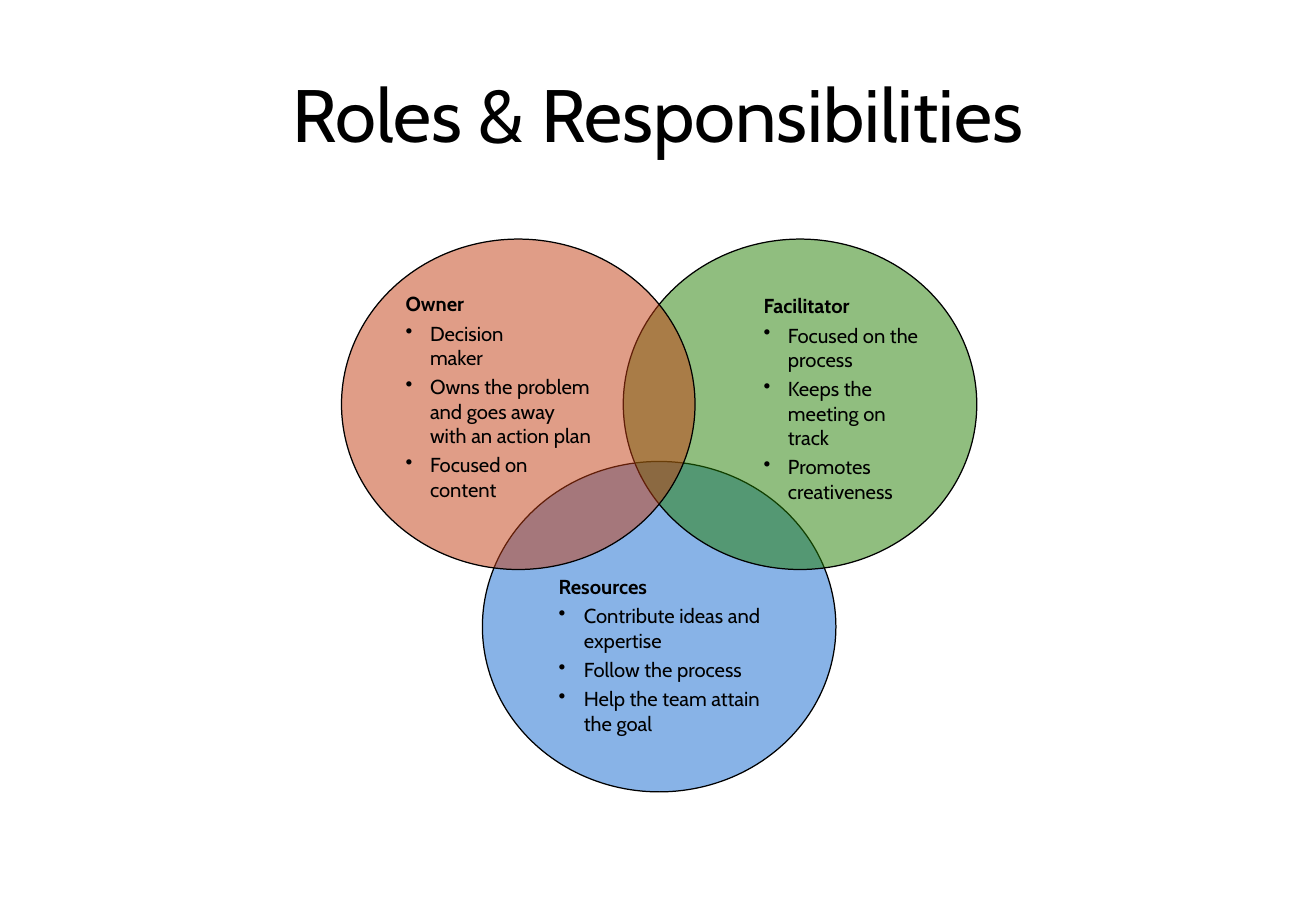
from dataclasses import dataclass

from pptx import Presentation
from pptx.dml.color import RGBColor
from pptx.enum import shapes, text
from pptx.oxml.ns import qn
from pptx.util import Cm, Pt
from lxml import etree

TITLE = "Roles & Responsibilities"
OWNER = ("Owner", [
    "Decision \vmaker",
    "Owns the problem \vand goes away \vwith an action plan",
    "Focused on \vcontent",
])
FACILITATOR = ("Facilitator", [
    "Focused on the process",
    "Keeps the meeting on track",
    "Promotes creativeness",
])
RESOURCES = ("Resources", [
    "Contribute ideas and expertise",
    "Follow the process",
    "Help the team attain the goal",
])


@dataclass(frozen=True)
class Theme:
    font: str = "Cabin"
    ink: str = "000000"
    owner: str = "C23C11"
    facilitator: str = "227E01"
    resources: str = "1369D1"
    opacity: int = 50
    title_size: int = 44
    body_size: int = 12
    gap: int = 3
    outline: float = 0.75


THEME = Theme()
SLIDE_WIDTH, SLIDE_HEIGHT = 27.51, 19.05
CIRCLE_WIDTH, CIRCLE_HEIGHT = 7.39, 6.91
LEFT, TOP = 7.14, 5.0
STEP_ACROSS, STEP_DOWN = 5.89, 4.65


def style(span, size, bold=False):
    span.font.name = THEME.font
    span.font.size = Pt(size)
    span.font.bold = bold
    span.font.color.rgb = RGBColor.from_string(THEME.ink)


def add_circle(page, column, row, color):
    circle = page.shapes.add_shape(
        shapes.MSO_SHAPE.OVAL,
        Cm(LEFT + column * STEP_ACROSS), Cm(TOP + row * STEP_DOWN),
        Cm(CIRCLE_WIDTH), Cm(CIRCLE_HEIGHT))
    circle.shadow.inherit = False
    circle.fill.solid()
    circle.fill.fore_color.rgb = RGBColor.from_string(color)
    tint = circle.fill._xPr.find(qn("a:solidFill"))[0]
    etree.SubElement(tint, qn("a:alpha")).set("val", str(THEME.opacity * 1000))
    circle.line.color.rgb = RGBColor.from_string(THEME.ink)
    circle.line.width = Pt(THEME.outline)
    return circle


def write_role(box, role, margin, hanging, inset_top, inset_right=0.25):
    heading, duties = role
    frame = box.text_frame
    frame.word_wrap = True
    frame.vertical_anchor = text.MSO_ANCHOR.TOP
    frame.margin_left, frame.margin_right = Cm(0.25), Cm(inset_right)
    frame.margin_top, frame.margin_bottom = Cm(inset_top), Cm(0.13)
    for index, line in enumerate([heading, *duties]):
        para = frame.add_paragraph() if index else frame.paragraphs[0]
        para.text = line
        para.alignment = text.PP_ALIGN.LEFT
        para.space_before = Pt(THEME.gap)
        properties = para._p.get_or_add_pPr()
        properties.set("marL", str(Cm(margin)))
        properties.set("indent", str(Cm(-hanging)))
        if index:
            etree.SubElement(properties, qn("a:buChar")).set("char", "•")
        for span in para.runs:
            style(span, THEME.body_size, bold=index == 0)


def main():
    deck = Presentation()
    deck.slide_width, deck.slide_height = Cm(SLIDE_WIDTH), Cm(SLIDE_HEIGHT)
    page = deck.slides.add_slide(deck.slide_layouts[5])

    title = page.shapes.title
    title.left, title.top = Cm(1.37), Cm(0.76)
    title.width, title.height = Cm(24.77), Cm(3.18)
    title.text_frame.text = TITLE
    title.text_frame.vertical_anchor = text.MSO_ANCHOR.MIDDLE
    para = title.text_frame.paragraphs[0]
    para.alignment = text.PP_ALIGN.CENTER
    style(para.runs[0], THEME.title_size)

    resources = add_circle(page, 0.5, 1, THEME.resources)
    write_role(resources, RESOURCES, 0.79, 0.53, inset_top=1.35)
    facilitator = add_circle(page, 1, 0, THEME.facilitator)
    write_role(facilitator, FACILITATOR, 2.11, 0.51, inset_top=0.13, inset_right=0)
    add_circle(page, 0, 0, THEME.owner)
    owner = page.shapes.add_textbox(
        Cm(LEFT + 0.53), Cm(TOP + 0.11), Cm(CIRCLE_WIDTH), Cm(CIRCLE_HEIGHT))
    write_role(owner, OWNER, 1.07, 0.51, inset_top=0.99)

    deck.save("out.pptx")


if __name__ == "__main__":
    main()
